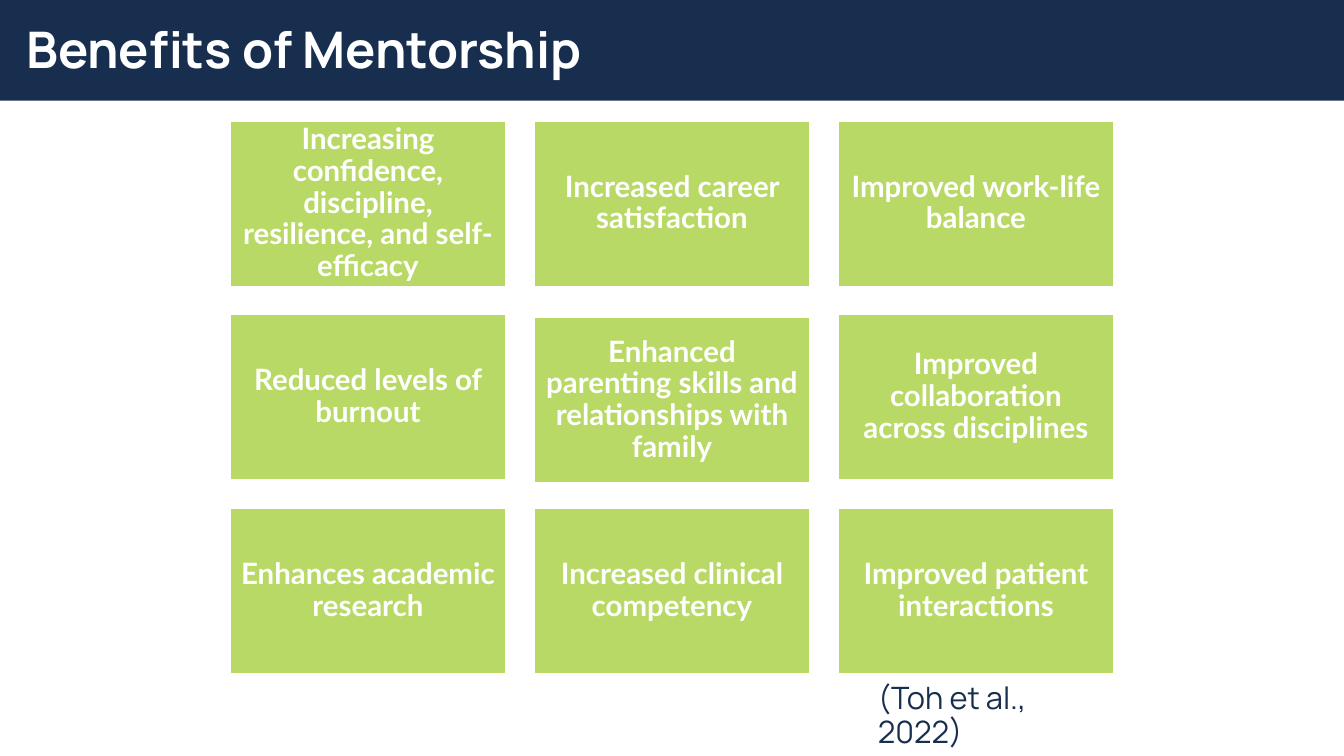
from dataclasses import dataclass
from pptx import Presentation
from pptx.dml import color
from pptx.enum import shapes, text
from pptx.util import Inches, Pt


@dataclass(frozen=True)
class Theme:
    """Hold the colours, fonts and type sizes of the slide."""
    navy: str = "182E4F"
    green: str = "B9D966"
    white: str = "FFFFFF"
    head: str = "Manrope"
    body: str = "Lato"
    title: int = 36
    tile: int = 21
    cite: int = 22


THEME = Theme()
GAINS = [
    ["Increasing confidence, discipline, resilience, and self-efficacy",
     "Increased career satisfaction",
     "Improved work-life balance"],
    ["Reduced levels of burnout",
     "Enhanced parenting skills and relationships with family",
     "Improved collaboration across disciplines"],
    ["Enhances academic research",
     "Increased clinical competency",
     "Improved patient interactions"],
]


def rgb(code):
    """Turn a hex code into a colour."""
    return color.RGBColor.from_string(code)


def write(shape, words, font, size, tint, bold=False, align="LEFT",
          anchor="MIDDLE", inset=(0.1, 0.05)):
    """Put formatted text into a shape."""
    frame = shape.text_frame
    frame.word_wrap = True
    frame.auto_size = text.MSO_AUTO_SIZE.NONE
    frame.vertical_anchor = text.MSO_ANCHOR[anchor]
    frame.margin_left = frame.margin_right = Inches(inset[0])
    frame.margin_top = frame.margin_bottom = Inches(inset[1])
    frame.text = words
    para = frame.paragraphs[0]
    para.alignment = text.PP_ALIGN[align]
    para.line_spacing = 0.9
    para.space_before = Pt(0)
    style = para.runs[0].font
    style.name, style.size, style.bold = font, Pt(size), bold
    style.color.rgb = rgb(tint)


def block(slide, box, fill, line=None):
    """Add a flat rectangle."""
    rect = slide.shapes.add_shape(
        shapes.MSO_SHAPE.RECTANGLE, *map(Inches, box))
    rect.shadow.inherit = False
    rect.fill.solid()
    rect.fill.fore_color.rgb = rgb(fill)
    if line:
        rect.line.color.rgb = rgb(line)
        rect.line.width = Pt(1)
    else:
        rect.line.fill.background()
    return rect


def header(slide, words):
    """Set the title on its dark band."""
    title = slide.shapes.title
    title.left, title.top = Inches(0.16), Inches(0.09)
    title.width, title.height = Inches(12.68), Inches(0.85)
    write(title, words, THEME.head, THEME.title, THEME.white, bold=True)
    band = block(slide, (0, 0, 13.33, 1), THEME.navy)
    title.element.addprevious(band.element)


def grid(slide, rows):
    """Lay out the benefits as equal tiles, the middle one slightly lower."""
    for i, row in enumerate(rows):
        for j, words in enumerate(row):
            drop = 0.03 if i == j == 1 else 0
            box = (2.28 + 3.015 * j, 1.2 + 1.92 * i + drop, 2.74, 1.64)
            tile = block(slide, box, THEME.green, THEME.white)
            write(tile, words, THEME.body, THEME.tile, THEME.white,
                  bold=True, align="CENTER", inset=(0.09, 0.09))


def source(slide, words):
    """Add the citation under the tiles."""
    box = slide.shapes.add_textbox(
        *map(Inches, (8.61, 6.73, 2.56, 0.44)))
    write(box, words, THEME.head, THEME.cite, THEME.navy, anchor="TOP")


def main():
    """Build and save the slide."""
    deck = Presentation()
    deck.slide_width, deck.slide_height = Inches(13.33), Inches(7.5)
    slide = deck.slides.add_slide(deck.slide_layouts.get_by_name("Title Only"))
    header(slide, "Benefits of Mentorship")
    grid(slide, GAINS)
    source(slide, "(Toh et al., 2022)")
    deck.save("out.pptx")


if __name__ == "__main__":
    main()
